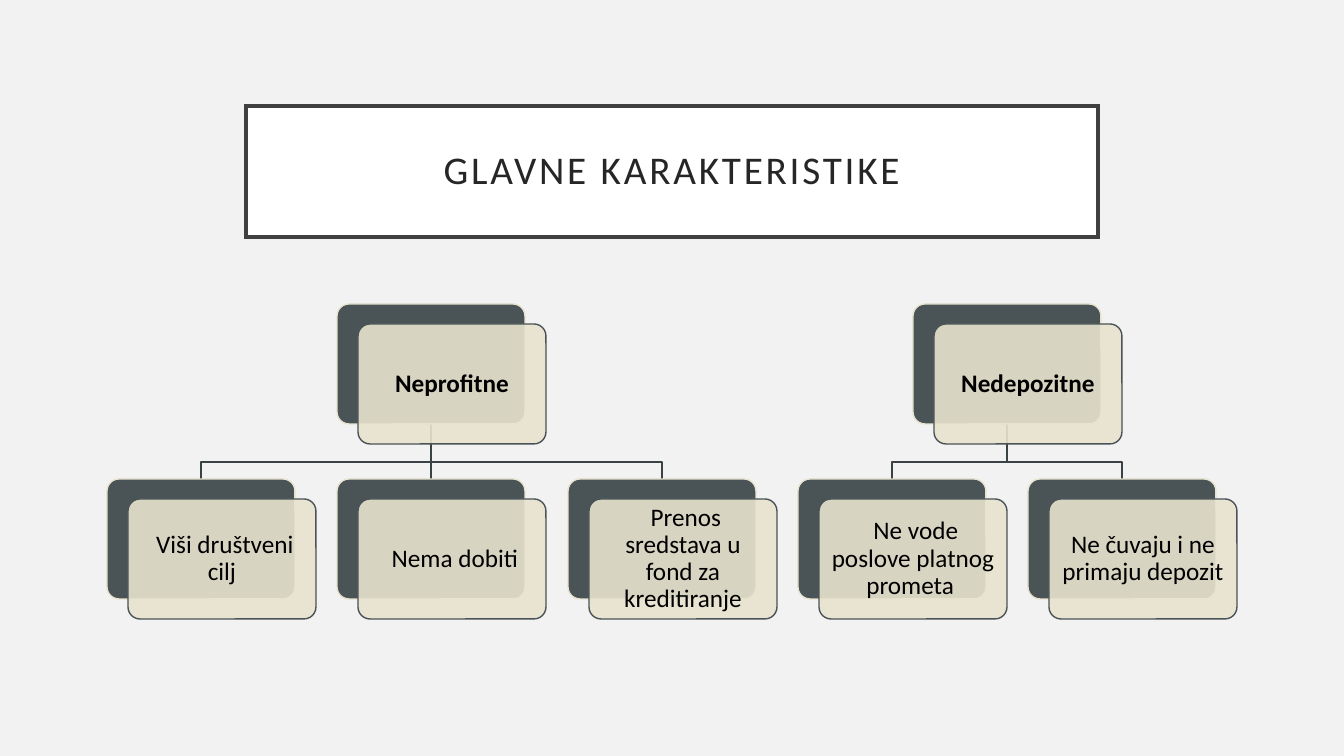
from lxml.etree import SubElement
from pptx import Presentation
from pptx.dml.color import RGBColor
from pptx.enum.shapes import MSO_CONNECTOR, MSO_SHAPE
from pptx.enum.text import MSO_ANCHOR, PP_ALIGN
from pptx.oxml.ns import qn
from pptx.util import Emu, Pt

# Content: each heading with its characteristics
TITLE = "GLAVNE KARAKTERISTIKE"
GROUPS = [
    ("Neprofitne", [" Viši društveni cilj", " Nema dobiti",
                    " Prenos sredstava u fond za kreditiranje"]),
    ("Nedepozitne", [" Ne vode poslove platnog prometa ",
                     "Ne čuvaju i ne primaju depozit"]),
]

# Layout in px
SLIDE_W, SLIDE_H = 1344, 756
PX = 12192000 / SLIDE_W
FIRST_X, LAST_X = 107, 1028
HEAD_Y, ITEM_Y, BEND_Y = 304, 479, 462
CARD_W, CARD_H = 188, 120
SHIFT_X, SHIFT_Y = 21, 20

DARK, CREAM, LINK = "4A5356", "E8E3CE", "3B4245"


def px(n):
    return Emu(round(n * PX))


def rgb(value):
    return RGBColor.from_string(value)


def set_line(sp, color, width):
    sp.line.color.rgb = rgb(color)
    sp.line.width = Pt(width)


def put_text(sp, text, size, color="000000", bold=False, inset=7, spacing=0):
    tf = sp.text_frame
    tf.word_wrap = True
    tf.vertical_anchor = MSO_ANCHOR.MIDDLE
    tf.margin_left = tf.margin_right = tf.margin_top = tf.margin_bottom = px(inset)
    p = tf.paragraphs[0]
    p.alignment = PP_ALIGN.CENTER
    p.line_spacing = 0.9
    r = p.add_run()
    r.text = text
    r.font.name = "Calibri"
    r.font.size = Pt(size)
    r.font.bold = bold
    r.font.color.rgb = rgb(color)
    if spacing:
        r.font._element.set("spc", str(spacing * 100))


def add_plate(x, y, fill, line):
    sp = shapes.add_shape(MSO_SHAPE.ROUNDED_RECTANGLE,
                          px(x), px(y), px(CARD_W), px(CARD_H))
    sp.adjustments[0] = 0.1
    sp.shadow.inherit = False
    sp.fill.solid()
    sp.fill.fore_color.rgb = rgb(fill)
    set_line(sp, line, 1)
    return sp


def add_card(x, y, text, bold):
    add_plate(x, y, DARK, CREAM)
    front = add_plate(x + SHIFT_X, y + SHIFT_Y, CREAM, DARK)
    clr = front._element.spPr.find(qn("a:solidFill")).find(qn("a:srgbClr"))
    SubElement(clr, qn("a:alpha")).set("val", "90000")
    put_text(front, text, 18, bold=bold)


def add_link(head_x, item_x):
    x1, x2 = head_x + CARD_W // 2, item_x + CARD_W // 2
    y1 = HEAD_Y + CARD_H
    if x1 == x2:
        sp = shapes.add_connector(MSO_CONNECTOR.STRAIGHT,
                                  px(x1), px(y1), px(x2), px(ITEM_Y))
        SubElement(sp._element.spPr, qn("a:effectLst"))
    else:
        path = shapes.build_freeform(x1, y1, scale=PX)
        path.add_line_segments([(x1, BEND_Y), (x2, BEND_Y), (x2, ITEM_Y)], close=False)
        sp = path.convert_to_shape()
        sp.shadow.inherit = False
        sp.fill.background()
    set_line(sp, LINK, 1)


prs = Presentation()
prs.slide_width, prs.slide_height = px(SLIDE_W), px(SLIDE_H)
slide = prs.slides.add_slide(prs.slide_layouts[5])
shapes = slide.shapes
slide.background.fill.solid()
slide.background.fill.fore_color.rgb = rgb("F2F2F2")

# Title
title = shapes.title
title.left, title.top, title.width, title.height = map(px, (246, 106, 852, 131))
title.fill.solid()
title.fill.fore_color.rgb = rgb("FFFFFF")
set_line(title, "404040", 2.5)
SubElement(title.line._get_or_add_ln(), qn("a:miter")).set("lim", "800000")
put_text(title, TITLE, 28, color="262626", inset=20, spacing=2)

# Cards: items evenly spread, each heading centred over its items
count = sum(len(items) for _, items in GROUPS)
columns = [round(FIRST_X + i * (LAST_X - FIRST_X) / (count - 1)) for i in range(count)]
cards, links = [], []
start = 0
for heading, items in GROUPS:
    xs = columns[start:start + len(items)]
    start += len(items)
    head_x = (xs[0] + xs[-1]) // 2
    cards.append((head_x, HEAD_Y, heading, True))
    cards += [(x, ITEM_Y, text, False) for x, text in zip(xs, items)]
    links += [(head_x, x) for x in xs]

# Links lie behind the cards
for link in links:
    add_link(*link)
for card in cards:
    add_card(*card)

prs.save("out.pptx")
